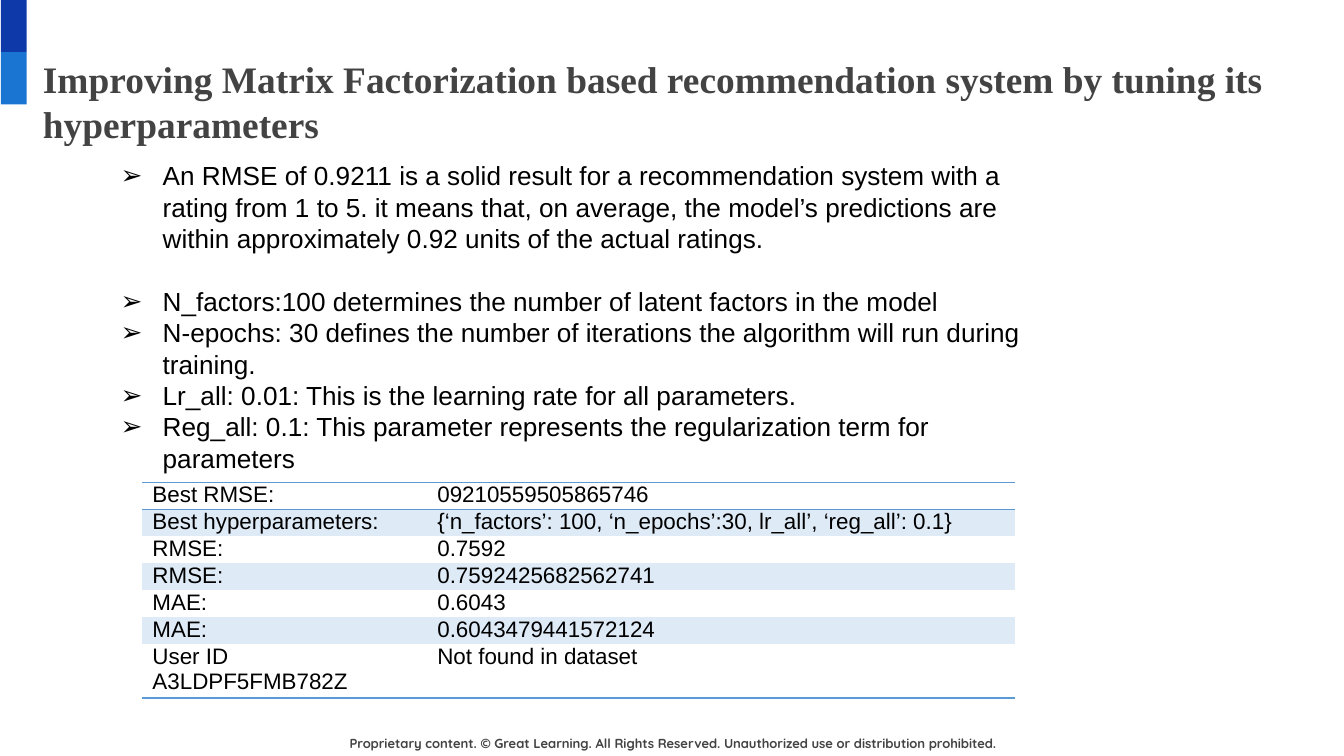
"""Build the slide on tuning a matrix factorization recommender."""
from lxml.etree import SubElement
from pptx import Presentation
from pptx.dml.color import RGBColor
from pptx.enum.shapes import MSO_SHAPE
from pptx.enum.text import MSO_ANCHOR, PP_ALIGN
from pptx.oxml.ns import qn
from pptx.util import Pt

TITLE = "Improving Matrix Factorization based recommendation system by tuning its hyperparameters"
FOOTER = ("Proprietary content. © Great Learning. All Rights Reserved. "
          "Unauthorized use or distribution prohibited.")
FINDINGS = [
    ("An RMSE of 0.9211 is a solid result for a recommendation system with a rating from 1 to 5. "
     "it means that, on average, the model’s predictions are within approximately 0.92 units "
     "of the actual ratings."),
    "N_factors:100 determines the number of latent factors in the model",
    "N-epochs: 30 defines the number of iterations the algorithm will run during training.",
    "Lr_all: 0.01: This is the learning rate for all parameters.",
    "Reg_all: 0.1: This parameter represents the regularization term for parameters",
]
RESULTS = [
    ("Best RMSE:", "09210559505865746"),
    ("Best hyperparameters:", "{‘n_factors’: 100, ‘n_epochs’:30, lr_all’, ‘reg_all’: 0.1}"),
    ("RMSE:", "0.7592"),
    ("RMSE:", "0.7592425682562741"),
    ("MAE:", "0.6043"),
    ("MAE:", "0.6043479441572124"),
    ("User ID A3LDPF5FMB782Z", "Not found in dataset"),
]
ACCENTS = ["0E39A9", "1974D2"]
RULE, BAND, INK, GREY = "5B9BD5", "DEEBF7", "000000", "434343"
NO_STYLE = "{2D5ABB26-0587-4C30-8999-92F81FD0307C}"
COLUMNS = [152.6, 314.6]
LINE = 14.4


def color(value):
    """Turn a hex string into a colour."""
    return RGBColor.from_string(value)


def write(para, text, size, face, ink=INK, bold=False):
    """Add one formatted run to a single-spaced paragraph."""
    para.line_spacing = 1.0
    span = para.add_run()
    span.text = text
    font = span.font
    font.size, font.name, font.bold = Pt(size), face, bold
    font.color.rgb = color(ink)


def set_frame(frame, inset_x, inset_y):
    """Set wrapping, insets and top anchor of a text frame."""
    frame.word_wrap = True
    frame.margin_left = frame.margin_right = Pt(inset_x)
    frame.margin_top = frame.margin_bottom = Pt(inset_y)
    frame.vertical_anchor = MSO_ANCHOR.TOP


def add_bullet(para):
    """Give a paragraph a hanging arrow bullet."""
    props = para._p.get_or_add_pPr()
    props.set("marL", str(Pt(22.5)))
    props.set("indent", str(-Pt(22.5)))
    SubElement(SubElement(props, qn("a:buClr")), qn("a:srgbClr"), val=INK)
    SubElement(props, qn("a:buFont"), typeface="Arial")
    SubElement(props, qn("a:buChar"), char="➢")


def add_rule(cell, side):
    """Draw a border on one side of a cell."""
    line = SubElement(cell._tc.get_or_add_tcPr(), qn(f"a:{side}"), w=str(Pt(1)))
    SubElement(SubElement(line, qn("a:solidFill")), qn("a:srgbClr"), val=RULE)


def add_title(page):
    """Place and write the title."""
    title = page.shapes.title
    title.left, title.top, title.width, title.height = Pt(15.8), Pt(23), Pt(671), Pt(45.4)
    set_frame(title.text_frame, 7.2, 7.2)
    para = title.text_frame.paragraphs[0]
    para.alignment = PP_ALIGN.LEFT
    write(para, TITLE, 20, "Times New Roman", GREY, True)


def add_accents(page):
    """Stack the corner blocks."""
    side = 28
    for index, fill in enumerate(ACCENTS):
        block = page.shapes.add_shape(
            MSO_SHAPE.RECTANGLE, Pt(0.5), Pt(index * side), Pt(13.8), Pt(side))
        block.shadow.inherit = False
        block.fill.solid()
        block.fill.fore_color.rgb = color(fill)
        block.line.fill.background()


def add_footer(page):
    """Write the copyright line."""
    box = page.shapes.add_textbox(Pt(176.5), Pt(389.7), Pt(368), Pt(21.6))
    set_frame(box.text_frame, 7.2, 7.2)
    para = box.text_frame.paragraphs[0]
    para.alignment = PP_ALIGN.CENTER
    write(para, FOOTER, 7, "Quicksand", GREY, True)


def add_results(page):
    """Build the banded results table."""
    last = len(RESULTS) - 1
    table = page.shapes.add_table(len(RESULTS), len(COLUMNS), Pt(76.3), Pt(258.5),
                                  Pt(sum(COLUMNS)), Pt(LINE * (last + 2))).table
    table.first_row = table.horz_banding = False
    table._tbl.tblPr.find(qn("a:tableStyleId")).text = NO_STYLE
    for column, width in zip(table.columns, COLUMNS):
        column.width = Pt(width)
    for index, texts in enumerate(RESULTS):
        table.rows[index].height = Pt(LINE * (2 if index == last else 1))
        for cell, text in zip(table.rows[index].cells, texts):
            cell.margin_left = cell.margin_right = Pt(5.4)
            cell.margin_top = cell.margin_bottom = Pt(0)
            write(cell.text_frame.paragraphs[0], text, 12, "Arial")
            if index == 0:
                add_rule(cell, "lnT")
            if index in (0, last):
                add_rule(cell, "lnB")
            if index % 2:
                cell.fill.solid()
                cell.fill.fore_color.rgb = color(BAND)


def add_findings(page):
    """Write the bulleted findings."""
    box = page.shapes.add_textbox(Pt(57.6), Pt(82.1), Pt(504), Pt(227.5))
    frame = box.text_frame
    set_frame(frame, 7.2, 3.6)
    for index, text in enumerate(FINDINGS):
        para = frame.add_paragraph() if index else frame.paragraphs[0]
        add_bullet(para)
        if index == 1:
            para.space_before = Pt(16.8)
        write(para, text, 14, "Arial")


def main():
    """Assemble and save the deck."""
    deck = Presentation()
    deck.slide_width, deck.slide_height = Pt(720), Pt(405)
    page = deck.slides.add_slide(deck.slide_layouts[5])
    add_footer(page)
    add_accents(page)
    add_title(page)
    add_results(page)
    add_findings(page)
    deck.save("out.pptx")


if __name__ == "__main__":
    main()
